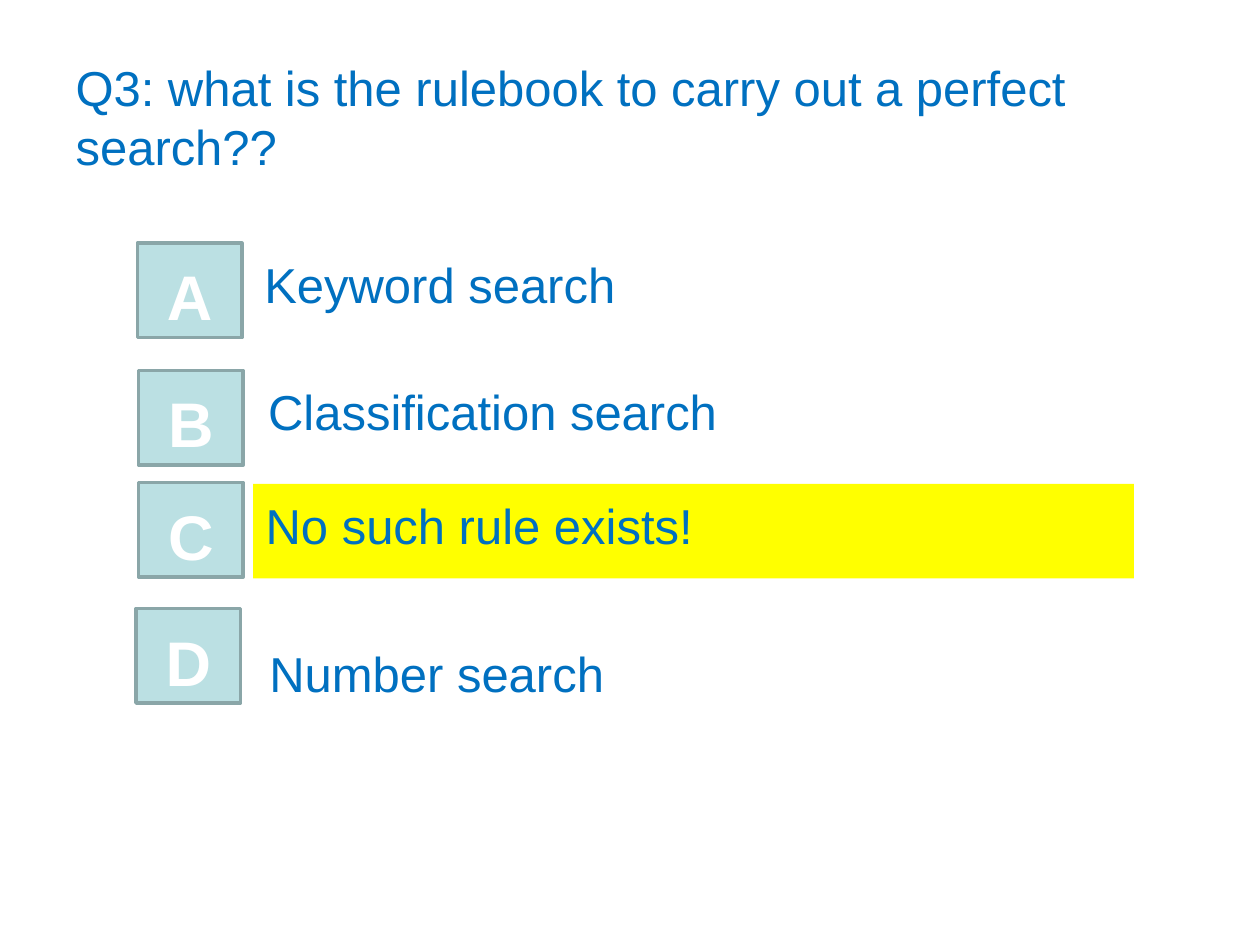
from pptx import Presentation
from pptx.dml.color import RGBColor
from pptx.enum.shapes import MSO_SHAPE
from pptx.enum.text import MSO_ANCHOR, PP_ALIGN
from pptx.util import Inches, Pt

TITLE = "Q3: what is the rulebook to carry out a perfect search??"
BLUE, WHITE, TEAL, GREY, YELLOW = "0070C0", "FFFFFF", "BBE0E3", "8AA6A8", "FFFF00"
BUTTON_W, ROW_H = 0.83, 0.75
# letter, button left, row top, answer, answer left, answer top, width, fill
ANSWERS = [
    ("A", 1.09, 1.93, "Keyword search", 2, 1.93, 6.5, None),
    ("B", 1.1, 2.94, "Classification search", 2.03, 2.94, 6.83, None),
    ("C", 1.1, 3.83, "No such rule exists!", 2.01, 3.84, 6.99, YELLOW),
    ("D", 1.08, 4.83, "Number search", 2.04, 5.02, 7.13, None),
]


def color(value):
    """Return the colour for a hex string."""
    return RGBColor.from_string(value)


def write(sp, text, size, hue, align, anchor, top, bold=False):
    """Set the text of a shape in one style."""
    tf = sp.text_frame
    tf.word_wrap = True
    tf.vertical_anchor = anchor
    tf.margin_top = Inches(top)
    p = tf.paragraphs[0]
    p.text = text
    p.alignment = align
    p.font.name, p.font.size, p.font.bold = "Arial", Pt(size), bold
    p.font.color.rgb = color(hue)


def add_box(s, kind, x, y, w, fill, line=None):
    """Add a row-high shape with an optional fill and line."""
    sp = s.shapes.add_shape(kind, Inches(x), Inches(y), Inches(w), Inches(ROW_H))
    sp.shadow.inherit = False
    sp.fill.solid()
    sp.fill.fore_color.rgb = color(fill)
    if line:
        sp.line.color.rgb = color(line)
        sp.line.width = Pt(2)
    else:
        sp.line.fill.background()
    return sp


def main():
    """Build the quiz slide."""
    prs = Presentation()
    prs.slide_width, prs.slide_height = Inches(10), Inches(7.5)
    s = prs.slides.add_slide(prs.slide_layouts[5])
    title = s.shapes.title
    title.left, title.top = Inches(0.5), Inches(0.3)
    title.width, title.height = Inches(9), Inches(1.25)
    write(title, TITLE, 28, BLUE, PP_ALIGN.LEFT, MSO_ANCHOR.MIDDLE, 0.05)

    for letter, button_x, y, answer, x, answer_y, w, fill in ANSWERS:
        button = add_box(s, MSO_SHAPE.ACTION_BUTTON_CUSTOM, button_x, y, BUTTON_W, TEAL, GREY)
        write(button, letter, 36, WHITE, PP_ALIGN.CENTER, MSO_ANCHOR.MIDDLE, 0.13, True)
        if fill:
            sp = add_box(s, MSO_SHAPE.RECTANGLE, x, answer_y, w, fill)
        else:
            sp = s.shapes.add_textbox(Inches(x), Inches(answer_y), Inches(w), Inches(ROW_H))
        write(sp, answer, 28, BLUE, PP_ALIGN.LEFT, MSO_ANCHOR.TOP, 0.09)

    prs.save("out.pptx")


if __name__ == "__main__":
    main()
